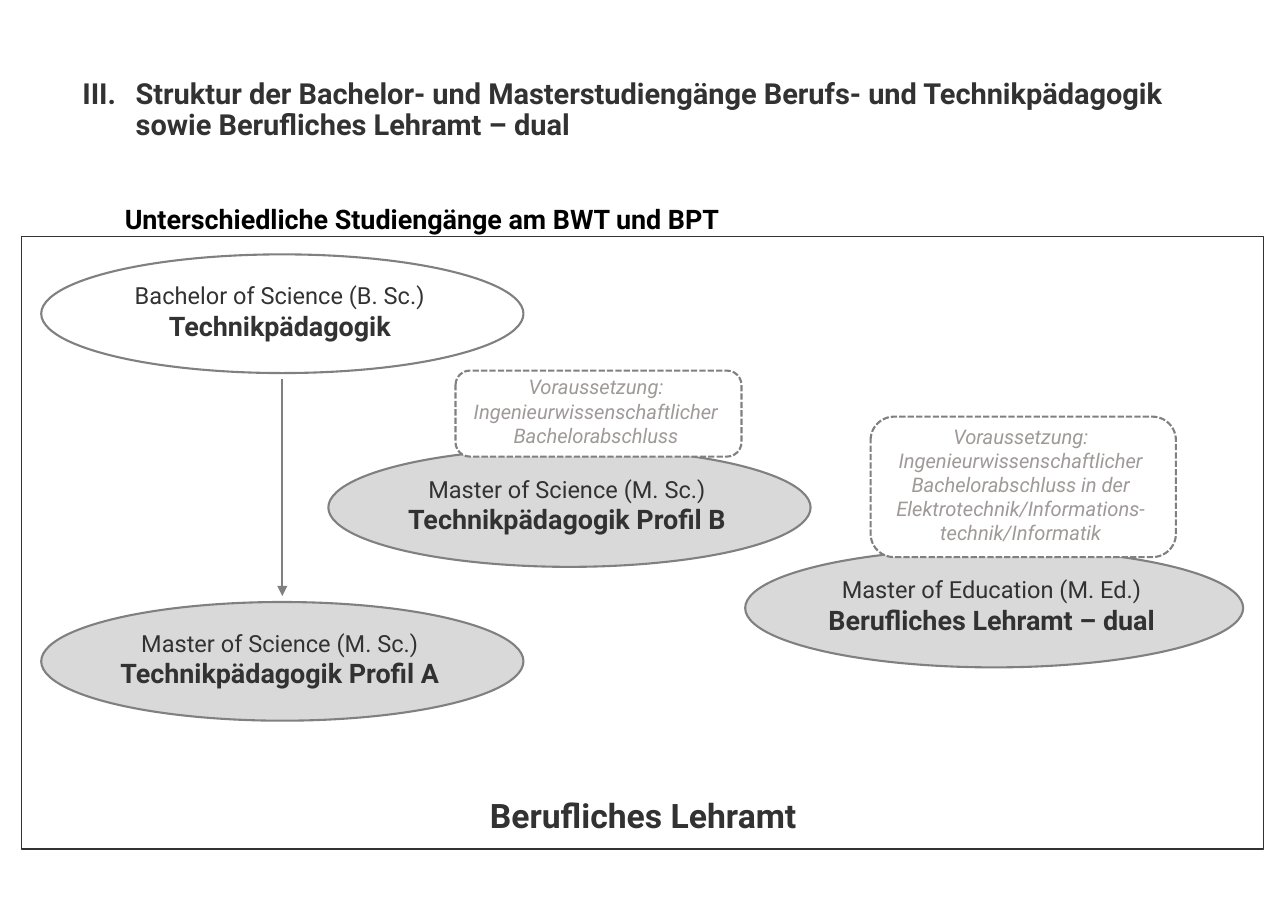
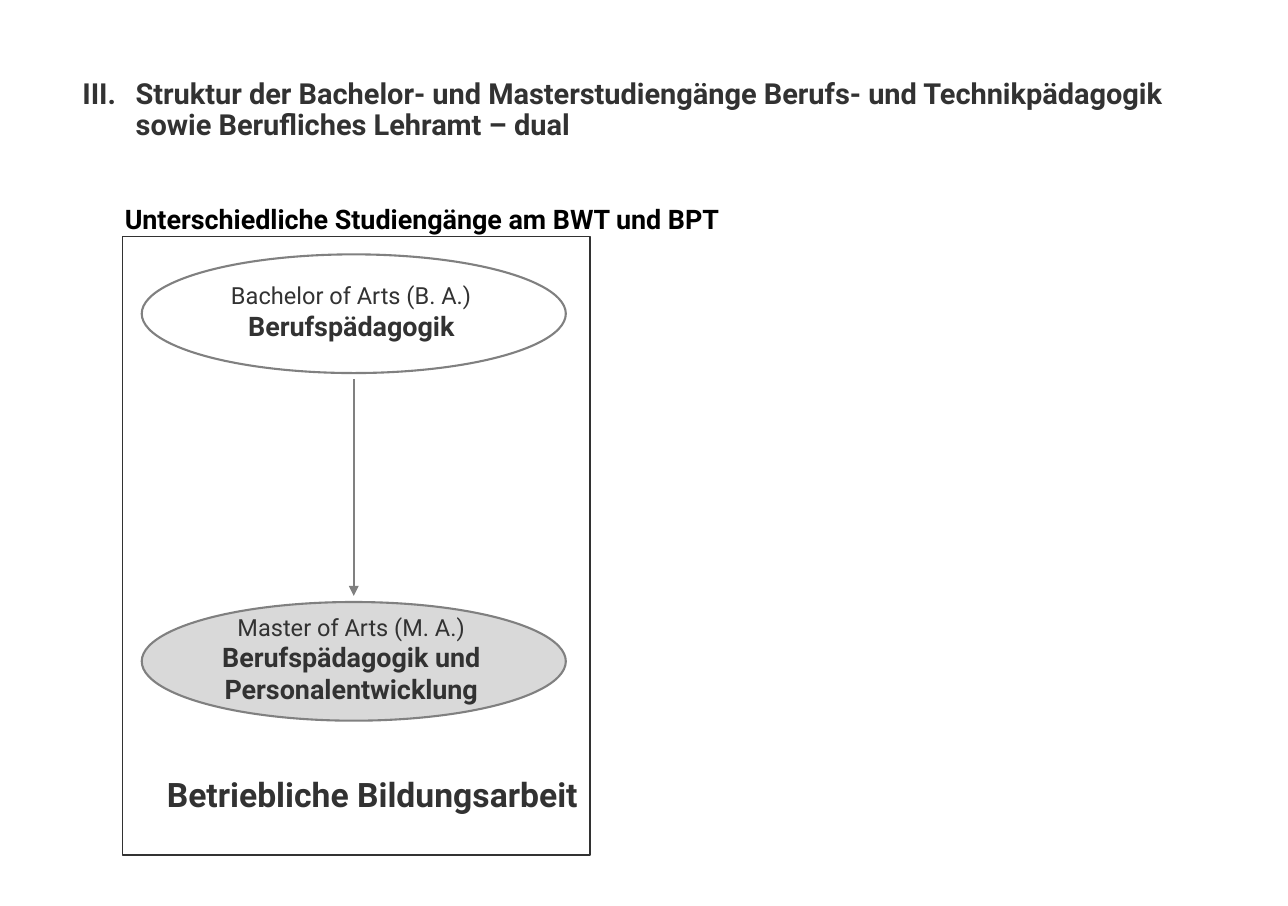
"""Build two slides on the structure of the degree programmes."""
from lxml.etree import SubElement
from pptx import Presentation
from pptx.dml.color import RGBColor
from pptx.enum.dml import MSO_LINE
from pptx.enum.shapes import MSO_CONNECTOR, MSO_SHAPE
from pptx.enum.text import MSO_ANCHOR, PP_ALIGN
from pptx.oxml.ns import qn
from pptx.util import Inches, Pt

TITLE = ("Struktur der Bachelor- und Masterstudiengänge Berufs- und "
         "Technikpädagogik sowie Berufliches Lehramt – dual")
LEAD = "Unterschiedliche Studiengänge am BWT und BPT"
TOP, MID, LOW, END = 2.1, 3.7, 4.53, 4.97
SLIDES = [
    {
        "frame": (0.18, 10.25, 5.06),
        "ovals": [
            (0.16, TOP, 3.98, "white", "Bachelor of Science (B. Sc.)", "Technikpädagogik"),
            (0.16, END, 3.98, "grey", "Master of Science (M. Sc.)", "Technikpädagogik Profil A"),
            (2.53, MID, 3.98, "grey", "Master of Science (M. Sc.)", "Technikpädagogik Profil B"),
            (5.97, LOW, 4.11, "grey", "Master of Education (M. Ed.)", "Berufliches Lehramt – dual"),
        ],
        "notes": [
            (2, 2.36, 0.71, "Voraussetzung: Ingenieurwissenschaftlicher Bachelorabschluss"),
            (3, 2.52, 1.16, "Voraussetzung: Ingenieurwissenschaftlicher Bachelorabschluss "
                            "in der Elektrotechnik/Informations-technik/Informatik"),
        ],
        "label": ("Berufliches Lehramt", 3.76, 6.51, 3.1, PP_ALIGN.CENTER),
    },
    {
        "frame": (1.01, 3.86, 5.11),
        "ovals": [
            (0.16, TOP, 3.5, "white", "Bachelor of Arts (B. A.)", "Berufspädagogik"),
            (0.16, END, 3.5, "grey", "Master of Arts (M. A.)",
             "Berufspädagogik und Personalentwicklung"),
        ],
        "notes": [],
        "label": ("Betriebliche Bildungsarbeit", 0.98, 6.34, 3.89, PP_ALIGN.RIGHT),
    },
]
THEME = {
    "font": "Roboto",
    "color": {"black": "000000", "dark": "323232", "line": "808080",
              "note": "9F9998", "grey": "D9D9D9", "white": "FFFFFF"},
    "size": {"title": 17.2, "lead": 16, "level": 14, "name": 16, "note": 12, "label": 20},
}
TALL, FRAME_TOP, GAP = 0.98, 1.95, 0.05
SHIFT, LAP = 0.24, 0.07


def tone(name):
    """Return a theme colour."""
    return RGBColor.from_string(THEME["color"][name])


def write(frame, text, size, color="dark", bold=False, italic=False,
          align=PP_ALIGN.LEFT, space=None, more=False):
    """Write one paragraph, the first or one more."""
    para = frame.add_paragraph() if more else frame.paragraphs[0]
    para.alignment, para.line_spacing = align, space
    run = para.add_run()
    run.text = text
    font = run.font
    font.name, font.size = THEME["font"], Pt(THEME["size"][size])
    font.bold, font.italic = bold, italic
    font.color.rgb = tone(color)
    return para


def mark(para, tag, indent=0, **attrs):
    """Set the bullet and hanging indent of a paragraph."""
    props = para._p.get_or_add_pPr()
    props.set("marL", str(Inches(indent)))
    props.set("indent", str(-Inches(indent)))
    SubElement(props, qn(tag), **attrs)


def place(item, *box):
    """Move an item to a box in inches."""
    item.left, item.top, item.width, item.height = map(Inches, box)


def draw(slide, kind, box, fill=None, line="line", width=1.25, dash=None):
    """Add an outlined shape and return its text frame."""
    shape = slide.shapes.add_shape(kind, *map(Inches, box))
    shape.shadow.inherit = False
    if fill:
        shape.fill.solid()
        shape.fill.fore_color.rgb = tone(fill)
    else:
        shape.fill.background()
    shape.line.color.rgb, shape.line.width = tone(line), Pt(width)
    if dash:
        shape.line.dash_style = dash
    frame = shape.text_frame
    frame.word_wrap, frame.vertical_anchor = True, MSO_ANCHOR.MIDDLE
    frame.margin_left = frame.margin_top = 0
    frame.margin_right = frame.margin_bottom = Inches(0.04)
    return frame


def link(slide, x, start, end):
    """Add a downward arrow."""
    arrow = slide.shapes.add_connector(
        MSO_CONNECTOR.STRAIGHT, *map(Inches, (x, start, x, end)))
    arrow.line.color.rgb, arrow.line.width = tone("line"), Pt(1.25)
    SubElement(arrow.line._get_or_add_ln(), qn("a:tailEnd"), type="triangle")
    SubElement(arrow._element.spPr, qn("a:effectLst"))


def head(slide):
    """Fill the title and body placeholders."""
    title, body = slide.placeholders
    frame = title.text_frame
    frame.vertical_anchor = MSO_ANCHOR.BOTTOM
    frame.margin_left = frame.margin_top = frame.margin_right = frame.margin_bottom = 0
    mark(write(frame, TITLE, "title", bold=True, space=0.9),
         "a:buAutoNum", 0.44, type="romanUcPeriod", startAt="3")
    para = write(body.text_frame, LEAD, "lead", "black", bold=True, space=1.1)
    para.space_before = Pt(0)
    mark(para, "a:buNone")


def build(slide, data):
    """Draw the programmes of one slide."""
    head(slide)
    left, wide, high = data["frame"]
    draw(slide, MSO_SHAPE.RECTANGLE, (left, FRAME_TOP, wide, high), line="dark", width=0.75)
    spots = []
    for x, y, width, fill, level, name in data["ovals"]:
        frame = draw(slide, MSO_SHAPE.OVAL, (left + x, y, width, TALL), fill)
        write(frame, level, "level", align=PP_ALIGN.CENTER)
        write(frame, name, "name", bold=True, align=PP_ALIGN.CENTER, more=True)
        spots.append((left + x + width / 2, y))
    link(slide, spots[0][0], TOP + TALL + GAP, END - GAP)
    for index, width, height, text in data["notes"]:
        x, y = spots[index]
        box = (x + SHIFT - width / 2, y + LAP - height, width, height)
        frame = draw(slide, MSO_SHAPE.ROUNDED_RECTANGLE, box, "white",
                     dash=MSO_LINE.SQUARE_DOT)
        write(frame, text, "note", "note", italic=True, align=PP_ALIGN.CENTER)
    text, x, y, width, align = data["label"]
    frame = slide.shapes.add_textbox(*map(Inches, (x, y, width, 0.44))).text_frame
    frame.word_wrap = True
    write(frame, text, "label", bold=True, align=align)


def main():
    """Set up the layout and save the slides."""
    deck = Presentation()
    deck.slide_width, deck.slide_height = Inches(10.63), Inches(7.48)
    layout = deck.slide_layouts[1]
    place(layout.placeholders[0], 0.68, 0.47, 9.54, 0.7)
    place(layout.placeholders[1], 0.93, 1.6, 8.97, 5.46)
    for data in SLIDES:
        build(deck.slides.add_slide(layout), data)
    deck.save("out.pptx")


if __name__ == "__main__":
    main()
